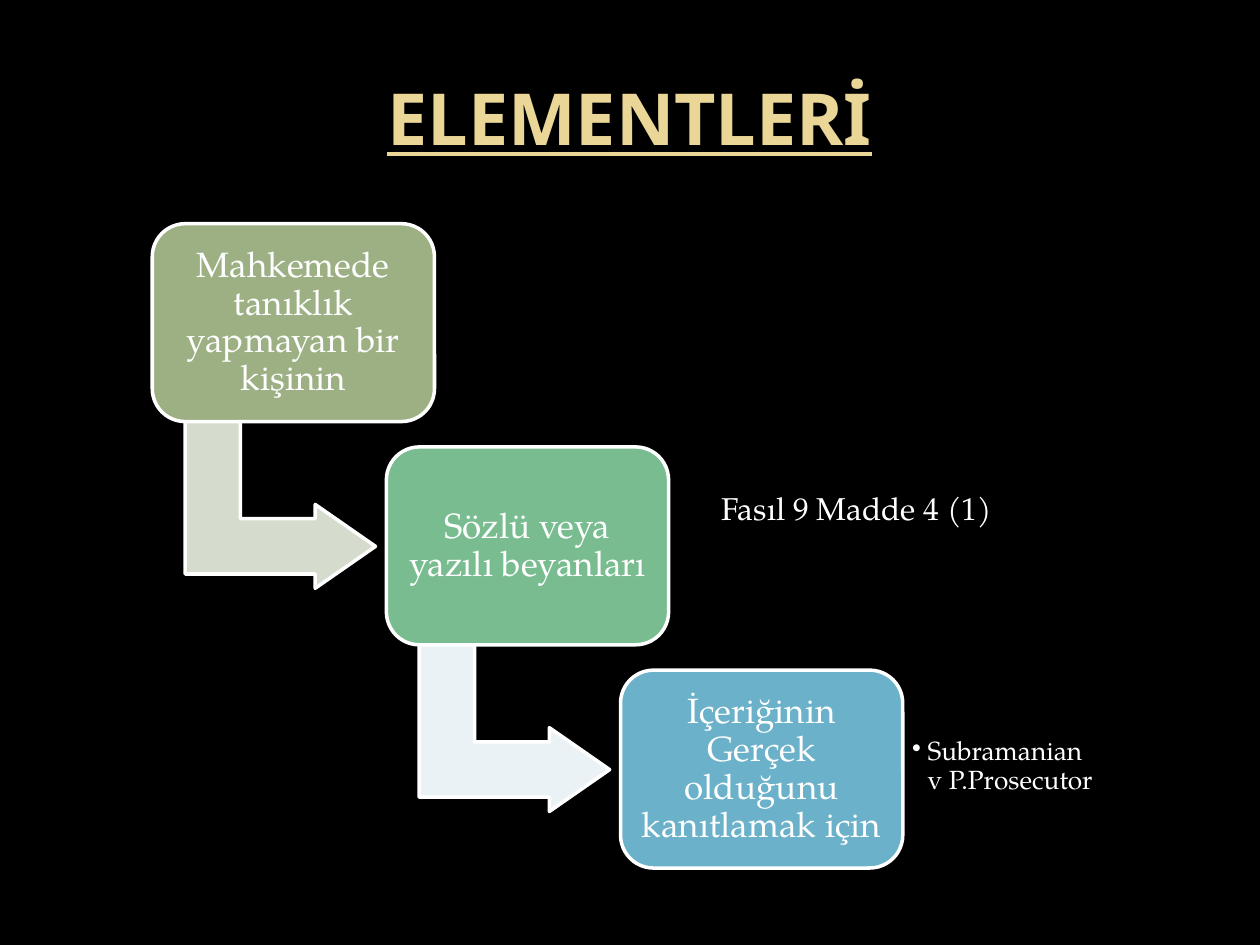
from dataclasses import dataclass
from typing import Any

from lxml import etree
from pptx import Presentation
from pptx import util as u
from pptx.dml.color import RGBColor
from pptx.enum import shapes, text
from pptx.oxml.ns import qn


def rgb(code):
    return RGBColor.from_string(code)


@dataclass
class Deck:
    s: Any
    title_font: str = "Noto Sans"
    body_font: str = "TeX Gyre Pagella"
    white: str = "FFFFFF"
    gold: str = "EAD696"

    def outlined(self, kind, left, top, width, height, fill):
        """Add a flat preset shape with the white outline."""
        sp = self.s.shapes.add_shape(
            kind, u.Cm(left), u.Cm(top), u.Cm(width), u.Cm(height))
        sp.shadow.inherit = False
        sp.fill.solid()
        sp.fill.fore_color.rgb = rgb(fill)
        sp.line.color.rgb = rgb(self.white)
        sp.line.width = u.Pt(2)
        return sp

    def set_text(self, sp, words, size, align, inset=None):
        """Fill a shape with one white paragraph and return it."""
        tf = sp.text_frame
        tf.word_wrap = True
        tf.vertical_anchor = text.MSO_ANCHOR.MIDDLE
        if inset is not None:
            tf.margin_left = tf.margin_right = u.Cm(inset)
            tf.margin_top = tf.margin_bottom = u.Cm(inset)
        p = tf.paragraphs[0]
        p.text = words
        p.alignment = align
        p.font.name = self.body_font
        p.font.size = u.Pt(size)
        p.font.color.rgb = rgb(self.white)
        return p

    def label(self, left, top, width, height, words, size,
              align=text.PP_ALIGN.LEFT, inset=None):
        sp = self.s.shapes.add_textbox(
            u.Cm(left), u.Cm(top), u.Cm(width), u.Cm(height))
        return self.set_text(sp, words, size, align, inset)

    def title(self, words):
        p = self.label(1.27, 0.76, 22.86, 3.18, words, 41,
                       text.PP_ALIGN.CENTER)
        p.font.name = self.title_font
        p.font.color.rgb = rgb(self.gold)
        p.font.bold = p.font.underline = True

    def card(self, left, top, words, fill):
        sp = self.outlined(shapes.MSO_SHAPE.ROUNDED_RECTANGLE,
                           left, top, 5.69, 3.99, fill)
        p = self.set_text(sp, words, 20, text.PP_ALIGN.CENTER, 0.2)
        p.line_spacing = 0.9

    def arrow(self, left, top, fill):
        sp = self.outlined(shapes.MSO_SHAPE.BENT_UP_ARROW,
                           left, top, 3.38, 3.84, fill)
        sp.rotation = 90
        for i, value in enumerate((0.33, 0.25, 0.36)):
            sp.adjustments[i] = value

    def bullet(self, left, top, width, height, words):
        p = self.label(left, top, width, height, words, 15, inset=0.2)
        p.line_spacing = 0.9
        pPr = p._p.get_or_add_pPr()
        indent = u.Cm(0.31)
        pPr.set("marL", str(indent))
        pPr.set("indent", str(-indent))
        mark = etree.Element(qn("a:buChar"), char="•")
        pPr.find(qn("a:lnSpc")).addnext(mark)


def main():
    prs = Presentation()
    prs.slide_width, prs.slide_height = u.Cm(25.4), u.Cm(19.05)
    s = prs.slides.add_slide(prs.slide_layouts[6])
    s.background.fill.solid()
    s.background.fill.fore_color.rgb = rgb("000000")
    deck = Deck(s)
    deck.title("ELEMENTLERİ")

    steps = [
        ("Mahkemede tanıklık yapmayan bir kişinin", "9CB084", "D5DCCE"),
        ("Sözlü veya yazılı beyanları", "78BC90", "EBF2F5"),
        ("İçeriğinin Gerçek olduğunu kanıtlamak için", "6BB1C9", None),
    ]
    for i, (words, fill, arrow_fill) in enumerate(steps):
        left, top = 3.07 + 4.72 * i, 4.51 + 4.5 * i
        if arrow_fill:
            deck.arrow(left + 0.89, top + 3.74, arrow_fill)
        deck.card(left, top, words, fill)

    deck.bullet(18.19, 13.84, 4.14, 3.23, "Subramanian v P.Prosecutor")
    deck.label(14.3, 9.73, 7.19, 1.02, "Fasıl 9 Madde 4 (1)", 18)
    prs.save("out.pptx")


if __name__ == "__main__":
    main()
